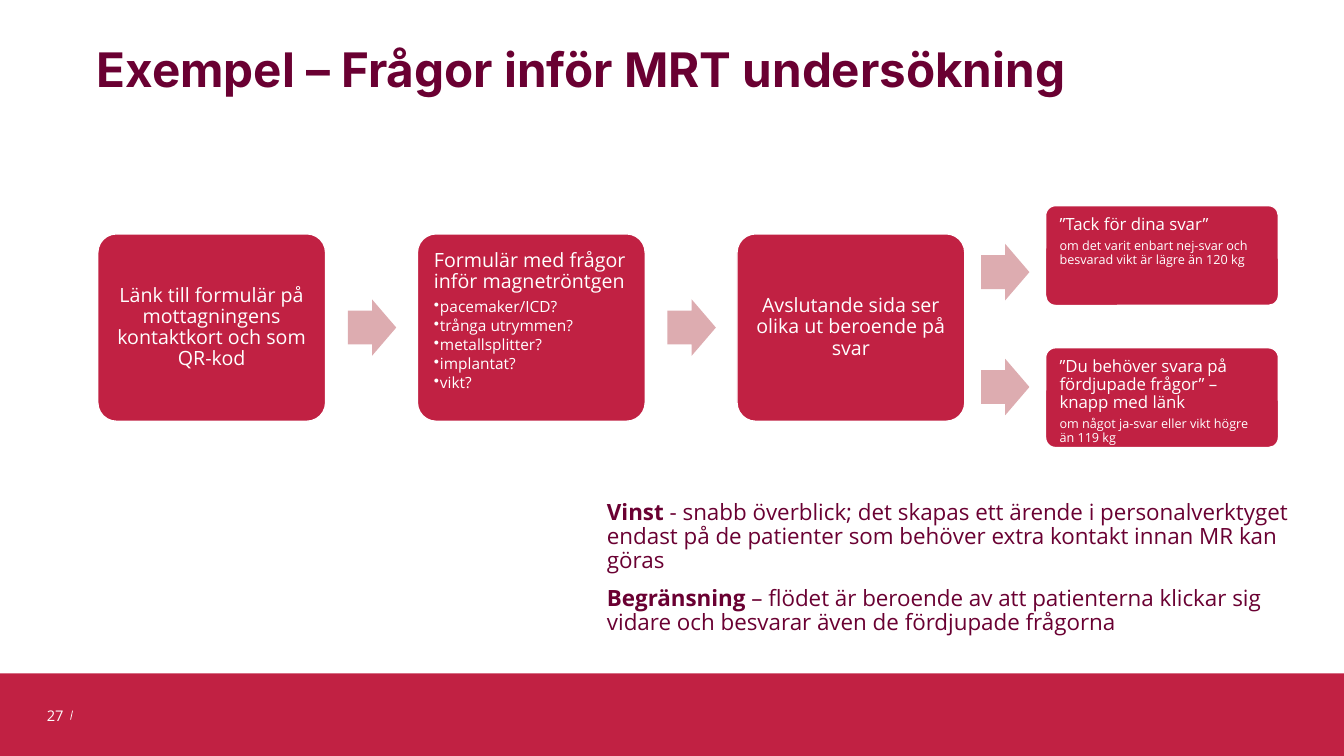
import pptx
import pptx.util
import pptx.dml.color
import pptx.enum.shapes
import pptx.enum.text
import pptx.oxml
import pptx.oxml.ns
from dataclasses import dataclass

Inches, Pt = pptx.util.Inches, pptx.util.Pt
SHAPE = pptx.enum.shapes.MSO_SHAPE
ALIGN = pptx.enum.text.PP_ALIGN
ANCHOR = pptx.enum.text.MSO_ANCHOR


@dataclass(frozen=True)
class Theme:
    red: str = "C12143"
    plum: str = "6A0032"
    pink: str = "DDACB0"
    white: str = "FFFFFF"
    head_font: str = "Inter"
    body_font: str = "Open Sans"
    title: float = 34
    body: float = 16
    step: float = 14
    bullet: float = 11
    outcome: float = 12
    detail: float = 9
    number: float = 10.5


T = Theme()

TITLE = "Exempel – Frågor inför MRT undersökning"
STEPS = [
    ("Länk till formulär på mottagningens kontaktkort och som QR-kod", []),
    ("Formulär med frågor inför magnetröntgen",
     ["pacemaker/ICD?", "trånga utrymmen?", "metallsplitter?", "implantat?", "vikt?"]),
    ("Avslutande sida ser olika ut beroende på svar", []),
]
OUTCOMES = [
    ("”Tack för dina svar”",
     "om det varit enbart nej-svar och besvarad vikt är lägre än 120 kg"),
    ("”Du behöver svara på fördjupade frågor” – knapp med länk",
     "om något ja-svar eller vikt högre än 119 kg"),
]
NOTES = [
    ("Vinst", " - snabb överblick; det skapas ett ärende i personalverktyget "
     "endast på de patienter som behöver extra kontakt innan MR kan göras"),
    ("Begränsning", " – flödet är beroende av att patienterna klickar sig "
     "vidare och besvarar även de fördjupade frågorna"),
]
PAGE = "27"

STEP_X, STEP_Y, STEP_W, STEP_H, STEP_PITCH = 0.97, 2.32, 2.26, 1.86, 3.17
ARROW_W, ARROW_H, ARROW_DX = 0.48, 0.56, 2.48
OUT_X, OUT_Y, OUT_W, OUT_H, OUT_PITCH = 10.37, 2.04, 2.31, 0.99, 1.41
FORK_X, FORK_Y, FORK_PITCH = 9.73, 2.42, 1.14


def rgb(value):
    return pptx.dml.color.RGBColor.from_string(value)


def add_text(tf, text, size, color=T.white, font=T.body_font, bold=False, lead="",
             align=ALIGN.LEFT, line=0.9, before=0, after=0, bullet=None):
    p = tf.paragraphs[0]
    if p.runs:
        p = tf.add_paragraph()
    pPr = p._p.get_or_add_pPr()
    indent = Inches(0.06) if bullet else 0
    pPr.set("marL", str(indent))
    pPr.set("indent", str(-indent))
    mark = pptx.oxml.ns.qn("a:buChar" if bullet else "a:buNone")
    bu = pPr.makeelement(mark, {"char": bullet} if bullet else {})
    pPr.append(bu)
    p.alignment, p.line_spacing = align, line
    p.space_before, p.space_after = Pt(before), Pt(after)
    for part, strong in ((lead, True), (text, bold)):
        if part:
            r = p.add_run()
            r.text = part
            r.font.name, r.font.size, r.font.bold = font, Pt(size), strong
            r.font.color.rgb = rgb(color)


def set_frame(tf, x=0.1, y=0.05, anchor=ANCHOR.TOP):
    tf.word_wrap = True
    tf.auto_size = pptx.enum.text.MSO_AUTO_SIZE.NONE
    tf.margin_left = tf.margin_right = Inches(x)
    tf.margin_top = tf.margin_bottom = Inches(y)
    tf.vertical_anchor = anchor


def place(sp, x, y, w, h):
    sp.left, sp.top, sp.width, sp.height = map(Inches, (x, y, w, h))


def add_block(s, kind, x, y, w, h, fill, outline=None, adjust=()):
    sp = s.shapes.add_shape(kind, *map(Inches, (x, y, w, h)))
    sp.shadow.inherit = False
    sp.fill.solid()
    sp.fill.fore_color.rgb = rgb(fill)
    for i, value in enumerate(adjust):
        sp.adjustments[i] = value
    if outline:
        sp.line.color.rgb = rgb(outline)
        sp.line.width = Pt(1)
    else:
        sp.line.fill.background()
    return sp


def add_card(s, x, y, w, h):
    return add_block(s, SHAPE.ROUNDED_RECTANGLE, x, y, w, h, T.red, T.white, (0.1,))


def add_arrow(s, x, y):
    add_block(s, SHAPE.RIGHT_ARROW, x, y, ARROW_W, ARROW_H, T.pink, adjust=(0.6, 0.5))


def add_footer(s):
    add_block(s, SHAPE.RECTANGLE, 0, 6.68, 13.33, 0.82, T.red)
    slash = s.shapes.add_connector(pptx.enum.shapes.MSO_CONNECTOR.STRAIGHT,
                                   *map(Inches, (0.72, 7.05, 0.7, 7.14)))
    slash.line.color.rgb = rgb(T.white)
    slash.line.width = Pt(0.5)
    slash._element.spPr.append(pptx.oxml.parse_xml(
        "<a:effectLst %s/>" % pptx.oxml.ns.nsdecls("a")))
    number = s.shapes.add_textbox(*map(Inches, (0.3, 6.9, 0.43, 0.4)))
    set_frame(number.text_frame, anchor=ANCHOR.MIDDLE)
    add_text(number.text_frame, PAGE, T.number, align=ALIGN.RIGHT, line=1, after=6)


def add_steps(s):
    for i, (text, bullets) in enumerate(STEPS):
        x = STEP_X + i * STEP_PITCH
        tf = add_card(s, x, STEP_Y, STEP_W, STEP_H).text_frame
        set_frame(tf, 0.11, 0.11, ANCHOR.TOP if bullets else ANCHOR.MIDDLE)
        add_text(tf, text, T.step, after=0.35 * T.step,
                 align=ALIGN.LEFT if bullets else ALIGN.CENTER)
        for item in bullets:
            add_text(tf, item, T.bullet, after=0.15 * T.bullet, bullet="•")
        if i < len(STEPS) - 1:
            add_arrow(s, x + ARROW_DX, STEP_Y + (STEP_H - ARROW_H) / 2)


def add_outcomes(s):
    for i, (text, detail) in enumerate(OUTCOMES):
        add_arrow(s, FORK_X, FORK_Y + i * FORK_PITCH)
        tf = add_card(s, OUT_X, OUT_Y + i * OUT_PITCH, OUT_W, OUT_H).text_frame
        set_frame(tf, 0.11, 0.07)
        add_text(tf, text, T.outcome, after=0.35 * T.outcome)
        add_text(tf, detail, T.detail, after=0.15 * T.detail)


def main():
    prs = pptx.Presentation()
    prs.slide_width, prs.slide_height = Inches(13.33), Inches(7.5)
    s = prs.slides.add_slide(prs.slide_layouts[1])
    title, notes = s.placeholders[0], s.placeholders[1]

    place(title, 0.96, 0.09, 11.02, 1.26)
    set_frame(title.text_frame, 0, 0, ANCHOR.MIDDLE)
    add_text(title.text_frame, TITLE, T.title, T.plum, T.head_font, bold=True)

    place(notes, 5.92, 4.92, 6.96, 1.45)
    set_frame(notes.text_frame)
    for i, (lead, text) in enumerate(NOTES):
        add_text(notes.text_frame, text, T.body, T.plum, lead=lead, before=10 if i else 0)

    add_footer(s)
    add_steps(s)
    add_outcomes(s)
    prs.save("out.pptx")


if __name__ == "__main__":
    main()
